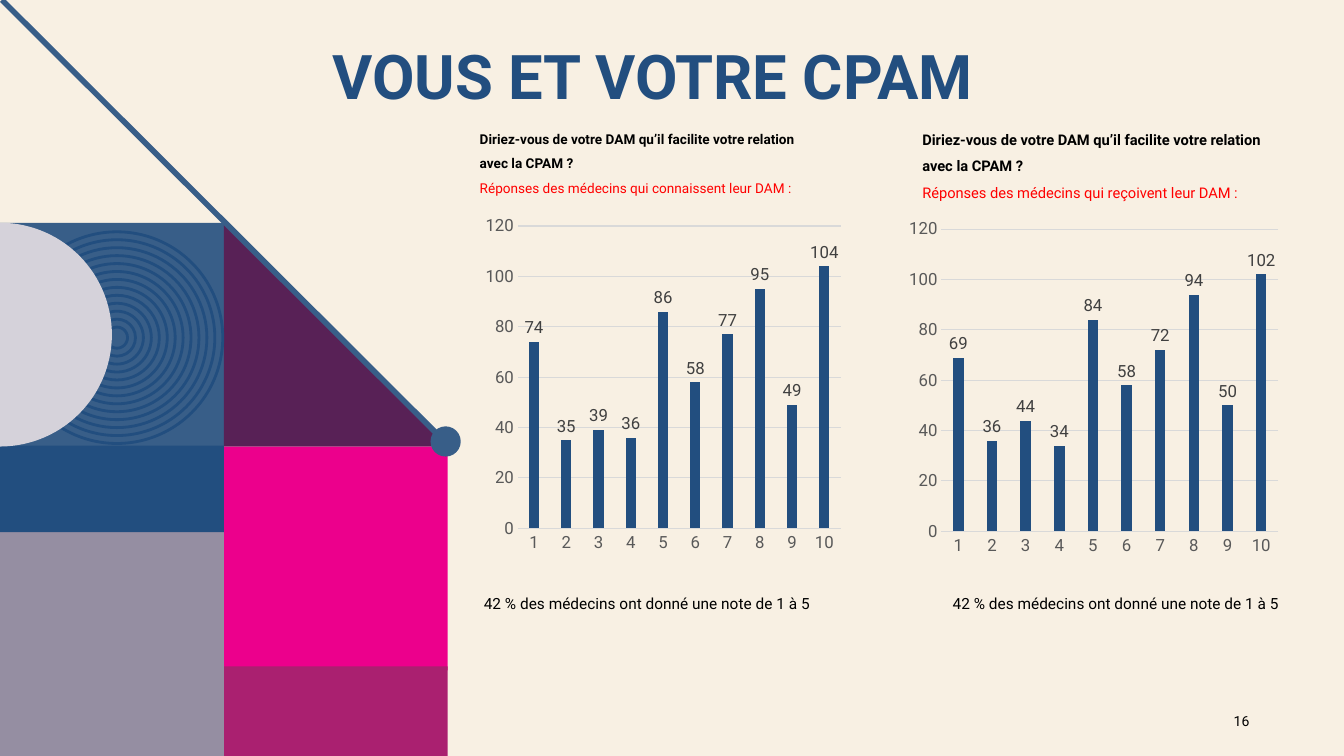
from math import cos, pi, sin

from lxml.etree import SubElement
from pptx import Presentation
from pptx.chart.data import CategoryChartData
from pptx.dml.color import RGBColor
from pptx.enum.chart import XL_CHART_TYPE, XL_LABEL_POSITION, XL_TICK_MARK
from pptx.enum.shapes import MSO_CONNECTOR, MSO_SHAPE
from pptx.enum.text import MSO_ANCHOR, PP_ALIGN
from pptx.oxml import parse_xml
from pptx.oxml.ns import nsdecls, qn
from pptx.util import Inches, Pt

FONT = "Roboto"
NAVY, STEEL, CREAM = "224E7F", "385E88", "F8F0E3"
TILE = 2.22
QUESTION = "Diriez-vous de votre DAM qu’il facilite votre relation avec la CPAM ?"
VERDICT = "42 % des médecins ont donné une note de 1 à 5"


def color(hex_code):
    """Return the colour for a hex string."""
    return RGBColor.from_string(hex_code)


def style_font(font, size, hex_code, bold=False):
    """Apply the slide's typeface with a size, colour and weight."""
    font.name = FONT
    font.size = Pt(size)
    font.bold = bold
    font.color.rgb = color(hex_code)


def paint(shape, hex_code):
    """Give a shape a flat fill without outline or shadow."""
    shape.shadow.inherit = False
    shape.fill.solid()
    shape.fill.fore_color.rgb = color(hex_code)
    shape.line.fill.background()


def add_block(slide, kind, box, hex_code):
    """Add a flat preset shape in a box."""
    paint(slide.shapes.add_shape(kind, *map(Inches, box)), hex_code)


def add_outline(slide, points, hex_code):
    """Add a flat closed polygon through points in inches."""
    corners = [(Inches(x), Inches(y)) for x, y in points]
    builder = slide.shapes.build_freeform(*corners[0])
    builder.add_line_segments(corners[1:], close=True)
    paint(builder.convert_to_shape(), hex_code)


def add_rings(slide, center_x, center_y, outer_radius, inner_radius, count):
    """Add evenly spaced concentric rings."""
    step = (outer_radius - inner_radius) / (count - 1)
    for index in range(count):
        radius = outer_radius - index * step
        ring = slide.shapes.add_shape(
            MSO_SHAPE.OVAL, Inches(center_x - radius), Inches(center_y - radius),
            Inches(2 * radius), Inches(2 * radius))
        ring.shadow.inherit = False
        ring.fill.background()
        ring.line.color.rgb = color(NAVY)
        ring.line.width = Pt(2)


def add_diagonal(slide, start, end):
    """Add the diagonal line and the dot at its lower end."""
    diagonal = slide.shapes.add_connector(
        MSO_CONNECTOR.STRAIGHT, *map(Inches, start + end))
    diagonal.line.color.rgb = color(STEEL)
    diagonal.line.width = Pt(4)
    SubElement(diagonal._element.spPr, qn("a:effectLst"))
    dot = 0.3
    add_block(slide, MSO_SHAPE.OVAL,
              (end[0] - 0.17, end[1] - 0.18, dot, dot), STEEL)


def add_mosaic(slide, left, top):
    """Draw the geometric decoration from the top left of its tiles."""
    right = left + TILE
    middle = top + TILE
    radius = TILE / 2
    square = MSO_SHAPE.RECTANGLE
    add_block(slide, square, (left, top, TILE, TILE), STEEL)
    add_outline(slide, [(right, top), (right + TILE, middle), (right, middle)], "582156")
    add_block(slide, square, (right, middle, TILE, TILE), "EC008C")
    add_block(slide, square, (right, top + 4.4, TILE, 0.89), "AA2070")
    add_block(slide, square, (left, top + 3.07, TILE, TILE), "958EA2")
    add_rings(slide, left + 1.16, top + 1.14, 1.05, 0.105, 13)
    add_block(slide, square, (left, middle - 0.01, TILE, 0.86), NAVY)
    angles = [pi * step / 60 - pi / 2 for step in range(61)]
    half_disc = [(left + radius * cos(a), top + radius + radius * sin(a)) for a in angles]
    add_outline(slide, half_disc, "D5D2DA")
    add_diagonal(slide, (left + 0.02, 0), (right + TILE, middle - 0.02))


def add_text(slide, box, lines, size, spacing=1, anchor=MSO_ANCHOR.TOP,
             align=PP_ALIGN.LEFT):
    """Add a text box with lines of wording, colour and weight."""
    frame = slide.shapes.add_textbox(*map(Inches, box)).text_frame
    frame.word_wrap = True
    frame.vertical_anchor = anchor
    frame.text = "\n".join(wording for wording, _, _ in lines)
    for paragraph, (_, hex_code, bold) in zip(frame.paragraphs, lines):
        paragraph.alignment = align
        paragraph.line_spacing = spacing
        style_font(paragraph.runs[0].font, size, hex_code, bold)


def set_plot_area(chart, x, width):
    """Fix the inner plot area as fractions of the chart."""
    plot_area = chart._chartSpace.chart.plotArea
    for layout in plot_area.findall(qn("c:layout")):
        plot_area.remove(layout)
    fractions = "".join(f'<c:{tag} val="{value}"/>' for tag, value in
                        (("x", x), ("y", 0.03), ("w", width), ("h", 0.88)))
    plot_area.insert(0, parse_xml(
        f'<c:layout {nsdecls("c")}><c:manualLayout><c:layoutTarget val="inner"/>'
        f'<c:xMode val="edge"/><c:yMode val="edge"/>{fractions}'
        '</c:manualLayout></c:layout>'))


def add_ratings_chart(slide, box, ratings, plot_x):
    """Add the column chart of ratings from 1 to 10."""
    chart_data = CategoryChartData()
    chart_data.categories = [str(note) for note in range(1, 11)]
    chart_data.add_series("Series 1", ratings)
    chart = slide.shapes.add_chart(
        XL_CHART_TYPE.COLUMN_CLUSTERED, *map(Inches, box), chart_data).chart
    chart.has_legend = False
    chart.has_title = False
    style_font(chart.font, 10, "000000")
    set_plot_area(chart, plot_x, 0.865)

    notes, counts = chart.category_axis, chart.value_axis
    for axis in (notes, counts):
        axis.major_tick_mark = XL_TICK_MARK.NONE
        axis.minor_tick_mark = XL_TICK_MARK.NONE
        style_font(axis.tick_labels.font, 12, "595959")
    counts.minimum_scale, counts.maximum_scale, counts.major_unit = 0, 120, 20
    counts.has_major_gridlines = True
    counts.format.line.fill.background()
    for line in (notes.format.line, counts.major_gridlines.format.line):
        line.color.rgb = color("D9D9D9")
        line.width = Pt(0.75)

    columns = chart.plots[0]
    columns.gap_width, columns.overlap = 219, -27
    columns.vary_by_categories = False
    bars = columns.series[0]
    bars.format.fill.solid()
    bars.format.fill.fore_color.rgb = color(NAVY)
    labels = bars.data_labels
    labels.show_value = True
    labels.position = XL_LABEL_POSITION.OUTSIDE_END
    style_font(labels.font, 12, "404040")


def add_survey(slide, question_box, size, audience, chart_box, ratings, plot_x,
               verdict_left):
    """Add one question with its chart and its conclusion."""
    add_ratings_chart(slide, chart_box, ratings, plot_x)
    add_text(slide, question_box,
             [(QUESTION, "000000", True), (audience, "FF0000", False)], size, 1.5)
    add_text(slide, (verdict_left, 5.84, 3.65, 0.29), [(VERDICT, "000000", False)], 11)


def main():
    """Build and save the slide."""
    deck = Presentation()
    deck.slide_width, deck.slide_height = Inches(13.33), Inches(7.5)
    slide = deck.slides.add_slide(deck.slide_layouts[6])
    slide.background.fill.solid()
    slide.background.fill.fore_color.rgb = color(CREAM)

    add_mosaic(slide, 0, 2.21)
    add_text(slide, (3.2, 0, 8.63, 1.17), [("VOUS ET VOTRE CPAM", NAVY, True)],
             44, 0.9, MSO_ANCHOR.BOTTOM)
    add_survey(slide, (4.66, 1.17, 3.6, 0.97), 9.7,
               "Réponses des médecins qui connaissent leur DAM :",
               (4.66, 2.14, 3.7, 3.41),
               (74, 35, 39, 36, 86, 58, 77, 95, 49, 104), 0.129, 4.7)
    add_survey(slide, (9.05, 1.16, 3.6, 0.97), 10.5,
               "Réponses des médecins qui reçoivent leur DAM :",
               (8.89, 2.17, 3.86, 3.41),
               (69, 36, 44, 34, 84, 58, 72, 94, 50, 102), 0.116, 9.35)
    add_text(slide, (11.99, 6.95, 0.5, 0.4), [("16", "000000", False)], 10,
             anchor=MSO_ANCHOR.MIDDLE, align=PP_ALIGN.RIGHT)
    deck.save("out.pptx")


if __name__ == "__main__":
    main()
